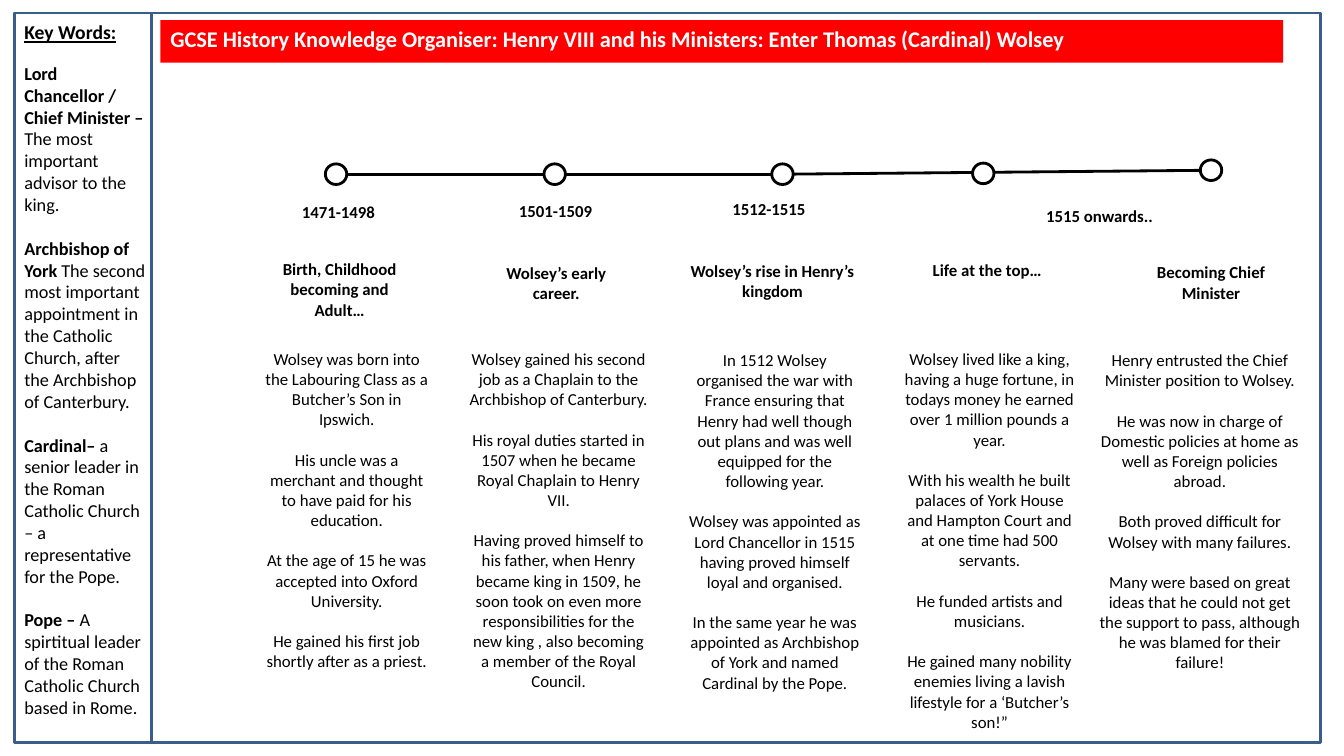
from dataclasses import dataclass

from lxml import etree
from pptx import Presentation
from pptx.dml.color import RGBColor
from pptx.enum import shapes, text
from pptx.oxml import ns
from pptx.util import Cm, Pt


@dataclass(frozen=True)
class Theme:
    font: str = "Calibri"
    ink: RGBColor = RGBColor(0, 0, 0)
    paper: RGBColor = RGBColor(255, 255, 255)
    banner: RGBColor = RGBColor(255, 0, 0)
    border: RGBColor = RGBColor(0x39, 0x5E, 0x89)
    title: int = 16
    key_head: int = 14
    key: int = 13
    body: int = 12
    line: int = 2


@dataclass(frozen=True)
class Event:
    """Box entries are centre x, top, width, height in cm inside the timeline region."""
    marker: tuple
    date: str
    date_at: tuple
    heading: str
    heading_box: tuple
    story: list
    story_box: tuple


T = Theme()
CENTER, LEFT = text.PP_ALIGN.CENTER, text.PP_ALIGN.LEFT
DATE_SIZE = (3.66, 0.84)
MARKER_SIZE = (0.54, 0.52)

TITLE = "GCSE History Knowledge Organiser: Henry VIII and his Ministers: Enter Thomas (Cardinal) Wolsey"
KEY_WORDS = [
    ("Lord Chancellor / Chief Minister – ", "The most important advisor to the king."),
    ("Archbishop of York ", "The second most important appointment in the Catholic Church, "
     "after the Archbishop of Canterbury."),
    ("Cardinal– ", "a senior leader in the Roman Catholic Church – a representative for the Pope."),
    ("Pope – ", "A spirtitual leader of the Roman Catholic Church based in Rome."),
]
EVENTS = [
    Event((4.43, 0.39), "1471-1498", (4.49, 0.95),
          "Birth, Childhood becoming and Adult…", (4.52, 2.4, 3.66, 2.59),
          ["Wolsey was born into the Labouring Class as a Butcher’s Son in Ipswich.",
           "His uncle was a merchant and thought to have paid for his education.",
           "At the age of 15 he was accepted into Oxford University.",
           "He gained his first job shortly after as a priest."], (4.7, 4.66, 4.62, 8.31)),
    Event((9.94, 0.39), "1501-1509", (9.96, 0.93),
          "Wolsey’s early career.", (9.98, 2.5, 3.66, 0.91),
          ["Wolsey gained his second job as a Chaplain to the Archbishop of Canterbury.",
           "His royal duties started in 1507 when he became Royal Chaplain to Henry VII.",
           "Having proved himself to his father, when Henry became king in 1509, he soon took on "
           "even more responsibilities for the new king , also becoming a member of the Royal "
           "Council."], (10.04, 4.66, 5.05, 8.61)),
    Event((15.68, 0.39), "1512-1515", (15.34, 0.88),
          "Wolsey’s rise in Henry’s kingdom", (15.43, 2.45, 5.66, 2.24),
          ["In 1512 Wolsey organised the war with France ensuring that Henry had well though out "
           "plans and was well equipped for the following year.",
           "Wolsey was appointed as Lord Chancellor in 1515 having proved himself loyal and "
           "organised.",
           "In the same year he was appointed as Archbishop of York and named Cardinal by the "
           "Pope."], (15.49, 4.69, 4.88, 8.61)),
    Event((20.74, 0.37), "1515 onwards..", (23.67, 1.05),
          "Life at the top…", (20.84, 2.43, 5.66, 2.24),
          ["Wolsey lived like a king, having a huge fortune, in todays money he earned over "
           "1 million pounds a year.",
           "With his wealth he built palaces of York House and Hampton Court and at one time had "
           "500 servants.",
           "He funded artists and musicians.",
           "He gained many nobility enemies living a lavish lifestyle for a ‘Butcher’s son!”"],
          (20.9, 4.66, 4.88, 8.61)),
    Event((26.48, 0.29), "", (),
          "Becoming Chief Minister", (26.48, 2.48, 4.09, 0.91),
          ["Henry entrusted the Chief Minister position to Wolsey.",
           "He was now in charge of Domestic policies at home as well as Foreign policies abroad.",
           "Both proved difficult for Wolsey with many failures.",
           "Many were based on great ideas that he could not get the support to pass, although he "
           "was blamed for their failure!"], (26.2, 4.69, 5.66, 9.5)),
]


def set_attrs(obj, **values):
    for name, value in values.items():
        setattr(obj, name, value)


def place(sp, box):
    set_attrs(sp, **dict(zip(("left", "top", "width", "height"), map(Cm, box))))


def write(tf, paragraphs, align, gaps):
    """Each paragraph is a list of (text, font values); gaps are points above it."""
    set_attrs(tf, word_wrap=True, auto_size=text.MSO_AUTO_SIZE.NONE,
              vertical_anchor=text.MSO_ANCHOR.TOP)
    for i, (runs, gap) in enumerate(zip(paragraphs, gaps)):
        p = tf.add_paragraph() if i else tf.paragraphs[0]
        set_attrs(p, alignment=align, space_before=Pt(gap), space_after=Pt(0), line_spacing=1.0)
        for words, style in runs:
            r = p.add_run()
            r.text = words
            style = {"name": T.font, "bold": False, "color": T.ink, **style}
            r.font.color.rgb = style.pop("color")
            style["size"] = Pt(style["size"])
            set_attrs(r.font, **style)


def add_outline(s, kind, box, color, fill=None):
    sp = s.shapes.add_shape(kind, *map(Cm, box))
    sp.shadow.inherit = False
    if fill is None:
        sp.fill.background()
    else:
        sp.fill.solid()
        sp.fill.fore_color.rgb = fill
    sp.line.color.rgb = color
    sp.line.width = Pt(T.line)


def add_line(s, start, end):
    line = s.shapes.add_connector(shapes.MSO_CONNECTOR.STRAIGHT, *map(Cm, start + end))
    line.line.color.rgb = T.ink
    line.line.width = Pt(T.line)
    etree.SubElement(line._element.spPr, ns.qn("a:effectLst"))


def add_centered(s, box, paragraphs, bold=False):
    center, top, width, height = box
    sp = s.shapes.add_textbox(*map(Cm, (center - width / 2, top, width, height)))
    runs = [[(words, {"size": T.body, "bold": bold})] for words in paragraphs]
    write(sp.text_frame, runs, CENTER, [0] + [14.4] * (len(runs) - 1))


def build_banner(s, box):
    sp = s.shapes.title
    place(sp, box)
    sp.fill.solid()
    sp.fill.fore_color.rgb = T.banner
    write(sp.text_frame, [[(TITLE, {"size": T.title, "bold": True, "color": T.paper})]], LEFT, [0])


def build_key_words(s, box):
    left, top, width, height = box
    add_outline(s, shapes.MSO_SHAPE.RECTANGLE, box, T.border)
    sp = s.placeholders[1]
    place(sp, (left, top + 0.05, width + 0.18, height - 0.08))
    heading = [("Key Words:", {"size": T.key_head, "bold": True, "underline": True})]
    terms = [[(term, {"size": T.key, "bold": True}), (meaning, {"size": T.key})]
             for term, meaning in KEY_WORDS]
    write(sp.text_frame, [heading] + terms, LEFT, [0, 13.2] + [15.6] * (len(terms) - 1))
    # Plain paragraphs without bullets
    for p in sp.text_frame.paragraphs:
        pr = p._p.get_or_add_pPr()
        pr.set("marL", "0")
        pr.set("indent", "0")
        etree.SubElement(pr, ns.qn("a:buNone"))


def build_timeline(s, box):
    left, top = box[:2]

    def shift(item):
        return (left + item[0], top + item[1], *item[2:])

    # Line in two stretches, then the markers over it
    for a, b in ((0, 2), (2, 4)):
        add_line(s, shift(EVENTS[a].marker), shift(EVENTS[b].marker))
    w, h = MARKER_SIZE
    for event in EVENTS:
        x, y = shift(event.marker)
        add_outline(s, shapes.MSO_SHAPE.OVAL, (x - w / 2, y - h / 2, w, h), T.ink, T.paper)
        # Date, heading and story
        if event.date:
            add_centered(s, shift(event.date_at + DATE_SIZE), [event.date], bold=True)
        add_centered(s, shift(event.heading_box), [event.heading], bold=True)
        add_centered(s, shift(event.story_box), event.story)


def main():
    prs = Presentation()
    set_attrs(prs, slide_width=Cm(33.87), slide_height=Cm(19.05))
    s = prs.slides.add_slide(prs.slide_layouts[1])
    frame = (0.36, 0.33, 32.92, 18.39)
    add_outline(s, shapes.MSO_SHAPE.RECTANGLE, frame, T.border)
    build_banner(s, (4.04, 0.51, 28.3, 1.07))
    build_key_words(s, (*frame[:2], 3.45, frame[3]))
    build_timeline(s, (4.04, 4, 29, 14.7))
    prs.save("out.pptx")


if __name__ == "__main__":
    main()
